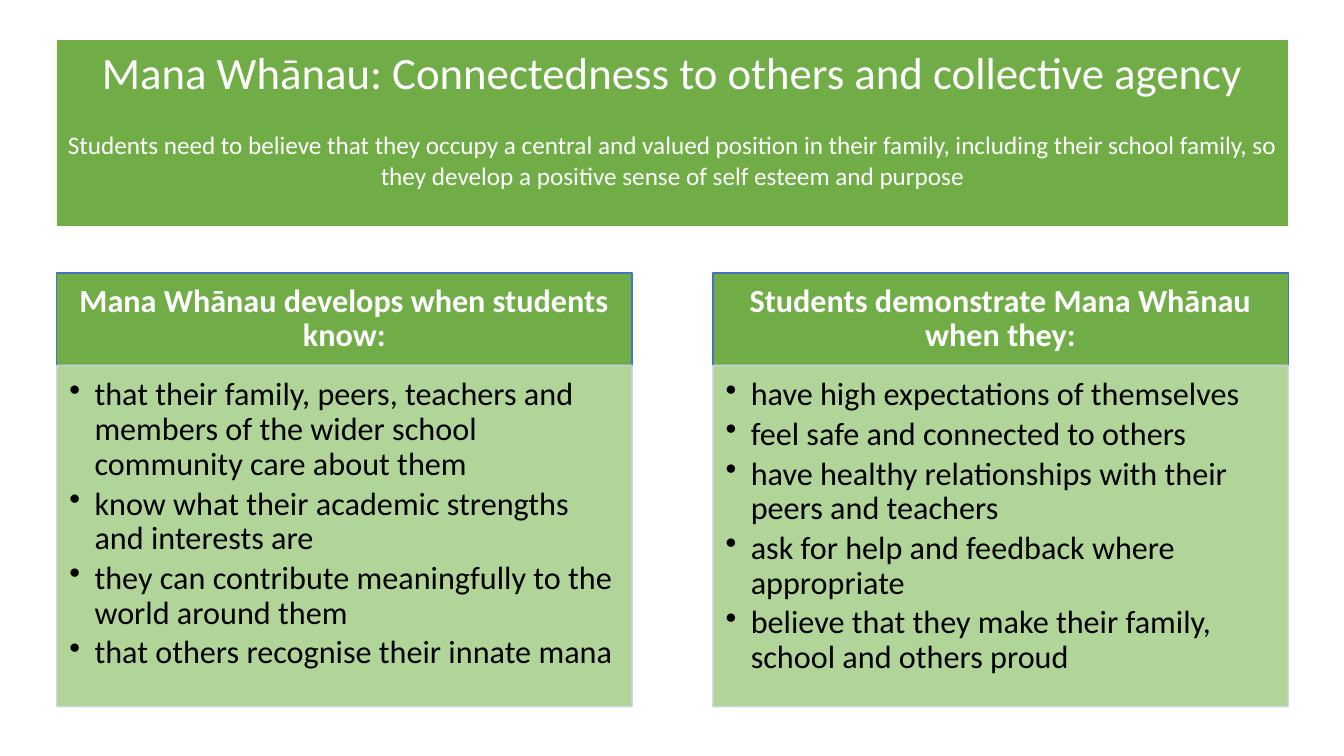
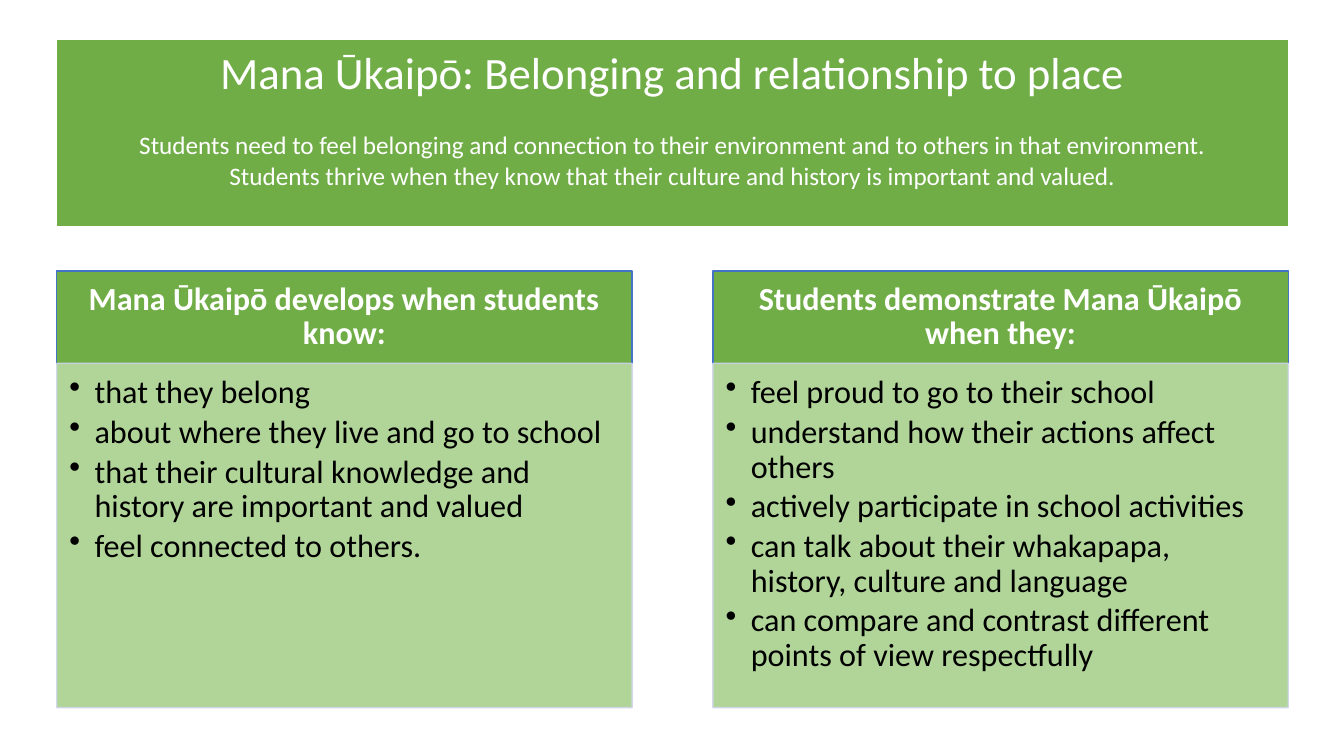
import pptx
import pptx.dml.color
import pptx.enum.shapes
import pptx.enum.text
import pptx.oxml.ns
import pptx.util
from dataclasses import dataclass
from lxml import etree

PP_ALIGN = pptx.enum.text.PP_ALIGN
ANCHOR = pptx.enum.text.MSO_ANCHOR

SLIDES = [
    {
        "title": "Mana Whānau: Connectedness to others and collective agency",
        "summary": [
            "Students need to believe that they occupy a central and valued position in their family, "
            "including their school family, so they develop a positive sense of self esteem and purpose",
        ],
        "columns_top": 260,
        "list_height": 325,
        "columns": [
            ("Mana Whānau develops when students know:", [
                "that their family, peers, teachers and members of the wider school community care about them",
                "know what their academic strengths and interests are",
                "they can contribute meaningfully to the world around them",
                "that others recognise their innate mana",
            ]),
            ("Students demonstrate Mana Whānau when they:", [
                "have high expectations of themselves",
                "feel safe and connected to others",
                "have healthy relationships with their peers and teachers",
                "ask for help and feedback where appropriate",
                "believe that they make their family, school and others proud",
            ]),
        ],
    },
    {
        "title": "Mana Ūkaipō: Belonging and relationship to place",
        "summary": [
            "Students need to feel belonging and connection to their environment and to others in that environment.",
            "Students thrive when they know that their culture and history is important and valued.",
        ],
        "columns_top": 258,
        "list_height": 328,
        "columns": [
            ("Mana Ūkaipō develops when students know:", [
                "that they belong",
                "about where they live and go to school",
                "that their cultural knowledge and history are important and valued",
                "feel connected to others.",
            ]),
            ("Students demonstrate Mana Ūkaipō when they:", [
                "feel proud to go to their school",
                "understand how their actions affect others",
                "actively participate in school activities",
                "can talk about their whakapapa, history, culture and language",
                "can compare and contrast different points of view respectfully",
            ]),
        ],
    },
]


@dataclass(frozen=True)
class Theme:
    font: str = "Calibri"
    green: str = "70AD47"
    light_green: str = "A9D18E"
    blue: str = "4472C4"
    pale_blue: str = "CFD5EA"
    white: str = "FFFFFF"
    black: str = "000000"
    title_size: int = 32
    summary_size: int = 18
    column_size: int = 23
    list_opacity: int = 90


THEME = Theme()
SLIDE_WIDTH, SLIDE_HEIGHT = 1280, 720
MARGIN = 54
BANNER_TOP, BANNER_WIDTH, BANNER_HEIGHT = 38, 1173, 178
COLUMN_WIDTH, HEADING_HEIGHT = 548, 88
COLUMN_STEP = BANNER_WIDTH - COLUMN_WIDTH
BULLET_INDENT = 24


def px(length):
    return pptx.util.Emu(length * 9525)


def set_colour(color_format, colour):
    color_format.rgb = pptx.dml.color.RGBColor.from_string(colour)


def set_opacity(properties, percent):
    """Make every colour below a fill or line element partly transparent."""
    for colour in properties.iter(pptx.oxml.ns.qn("a:srgbClr")):
        alpha = etree.SubElement(colour, pptx.oxml.ns.qn("a:alpha"))
        alpha.set("val", str(percent * 1000))


def add_panel(slide, box, fill, line, line_width, insets, anchor, texts):
    """Add a filled rectangle holding one paragraph per text."""
    shape = slide.shapes.add_shape(pptx.enum.shapes.MSO_SHAPE.RECTANGLE, *map(px, box))
    shape.shadow.inherit = False
    shape.fill.solid()
    set_colour(shape.fill.fore_color, fill)
    set_colour(shape.line.color, line)
    shape.line.width = pptx.util.Pt(line_width)
    frame = shape.text_frame
    frame.word_wrap = True
    frame.vertical_anchor = anchor
    frame.margin_left, frame.margin_top, frame.margin_right, frame.margin_bottom = map(px, insets)
    frame.text = "\n".join(texts)
    return shape


def style_paragraph(paragraph, size, colour, align=PP_ALIGN.CENTER, bold=False):
    paragraph.alignment = align
    font = paragraph.font
    font.name, font.size, font.bold = THEME.font, pptx.util.Pt(size), bold
    set_colour(font.color, colour)


def add_bullet(paragraph):
    properties = paragraph._p.get_or_add_pPr()
    properties.set("marL", str(px(BULLET_INDENT)))
    properties.set("indent", str(-px(BULLET_INDENT)))
    etree.SubElement(properties, pptx.oxml.ns.qn("a:buChar")).set("char", "•")


def add_banner(slide, title, summary):
    box = (MARGIN, BANNER_TOP, BANNER_WIDTH, BANNER_HEIGHT)
    shape = add_panel(slide, box, THEME.green, THEME.white, 0.75, (10, 5, 10, 5),
                      ANCHOR.TOP, [title, *summary])
    heading, *lines = shape.text_frame.paragraphs
    style_paragraph(heading, THEME.title_size, THEME.white)
    heading.space_after = pptx.util.Pt(22)
    for paragraph in lines:
        style_paragraph(paragraph, THEME.summary_size, THEME.white)


def add_column(slide, left, top, list_height, heading, items):
    header = add_panel(slide, (left, top, COLUMN_WIDTH, HEADING_HEIGHT), THEME.green, THEME.blue, 1,
                       (17, 10, 17, 10), ANCHOR.MIDDLE, [heading])
    paragraph = header.text_frame.paragraphs[0]
    style_paragraph(paragraph, THEME.column_size, THEME.white, bold=True)
    paragraph.line_spacing = 0.9

    box = (left, top + HEADING_HEIGHT, COLUMN_WIDTH, list_height)
    panel = add_panel(slide, box, THEME.light_green, THEME.pale_blue, 1,
                      (12, 12, 17, 19), ANCHOR.TOP, items)
    set_opacity(panel._element.spPr, THEME.list_opacity)
    for paragraph in panel.text_frame.paragraphs:
        add_bullet(paragraph)
        style_paragraph(paragraph, THEME.column_size, THEME.black, PP_ALIGN.LEFT)
        paragraph.line_spacing = 0.9
        paragraph.space_after = pptx.util.Pt(3.5)


def main():
    presentation = pptx.Presentation()
    presentation.slide_width, presentation.slide_height = px(SLIDE_WIDTH), px(SLIDE_HEIGHT)
    for content in SLIDES:
        slide = presentation.slides.add_slide(presentation.slide_layouts[6])
        for index, (heading, items) in enumerate(content["columns"]):
            add_column(slide, MARGIN + index * COLUMN_STEP, content["columns_top"],
                       content["list_height"], heading, items)
        add_banner(slide, content["title"], content["summary"])
    presentation.save("out.pptx")


if __name__ == "__main__":
    main()
